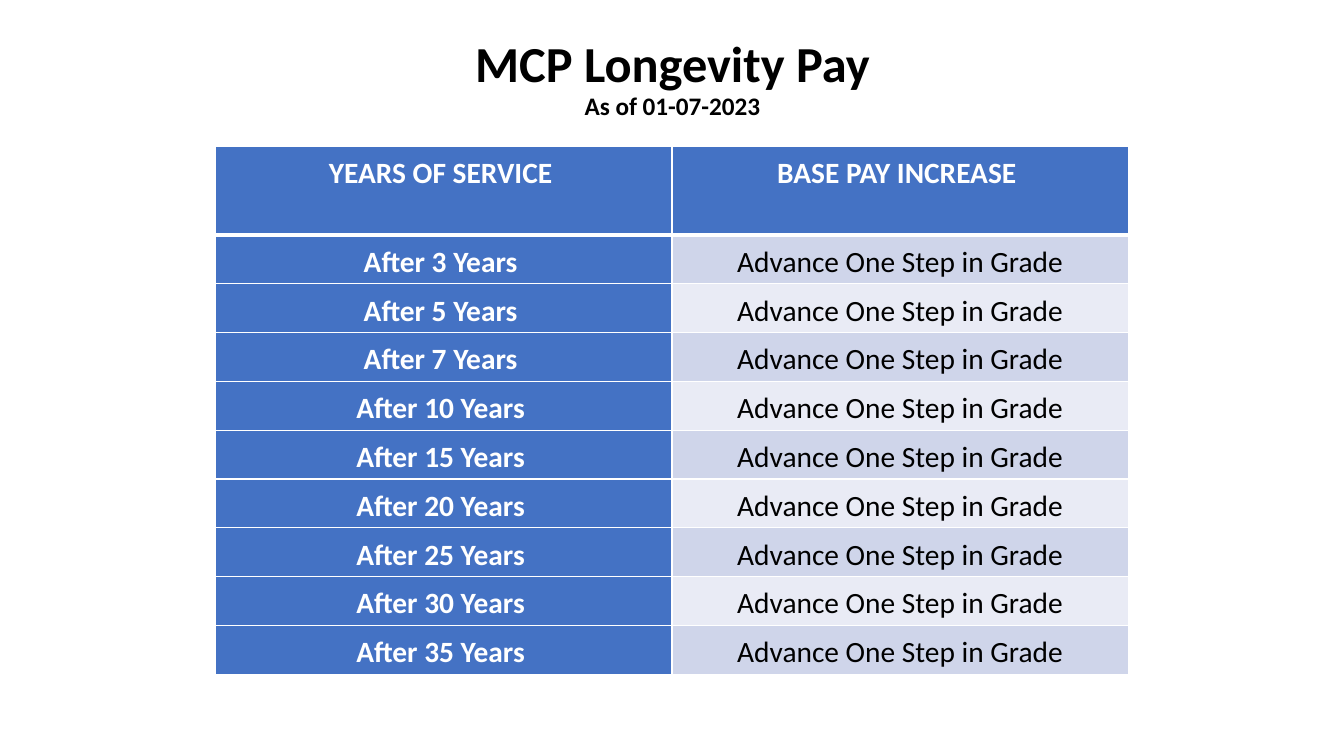
from lxml.etree import SubElement
from pptx import Presentation
from pptx.dml.color import RGBColor
from pptx.enum.text import MSO_ANCHOR, PP_ALIGN
from pptx.oxml.ns import qn
from pptx.util import Inches, Pt

COLORS = {
    "text": "000000",
    "white": "FFFFFF",
    "header": "4472C4",
    "odd_row": "CFD5EA",
    "even_row": "E9EBF5",
}
HEADINGS = ("YEARS OF SERVICE ", "BASE PAY INCREASE ")
SERVICE_YEARS = (3, 5, 7, 10, 15, 20, 25, 30, 35)
HEADER_HEIGHT = 0.88
TABLE_HEIGHT = 5.24
TABLE_WIDTH = 9.05


def format_paragraph(paragraph, size, color, bold, line_spacing):
    paragraph.alignment = PP_ALIGN.CENTER
    paragraph.line_spacing = line_spacing
    for run in paragraph.runs:
        run.font.name = "Calibri"
        run.font.size = Pt(size)
        run.font.bold = bold
        run.font.color.rgb = RGBColor.from_string(COLORS[color])


def add_borders(cell, top, bottom):
    """Draw white cell edges; top and bottom are widths in points."""
    properties = cell._tc.get_or_add_tcPr()
    for edge, width in (("lnL", 1), ("lnR", 1), ("lnT", top), ("lnB", bottom)):
        line = SubElement(properties, qn(f"a:{edge}"), w=str(Pt(width)))
        fill = SubElement(line, qn("a:solidFill"))
        SubElement(fill, qn("a:srgbClr"), val=COLORS["white"])


presentation = Presentation()
presentation.slide_width = Inches(13.33)
presentation.slide_height = Inches(7.5)
slide = presentation.slides.add_slide(presentation.slide_layouts[6])

heading = slide.shapes.add_textbox(
    Inches(0.92), 0, Inches(11.5), Inches(1.45)
).text_frame
heading.word_wrap = True
heading.vertical_anchor = MSO_ANCHOR.MIDDLE
heading.margin_top = Inches(0.19)
heading.text = "MCP Longevity Pay\nAs of 01-07-2023"
for paragraph, size in zip(heading.paragraphs, (36, 18)):
    format_paragraph(paragraph, size, "text", True, 0.9)

rows = [HEADINGS] + [
    (f"After {years} Years ", "Advance One Step in Grade") for years in SERVICE_YEARS
]
pay_table = slide.shapes.add_table(
    len(rows), len(HEADINGS),
    Inches(2.14), Inches(1.45), Inches(TABLE_WIDTH), Inches(TABLE_HEIGHT),
).table

step_height = (TABLE_HEIGHT - HEADER_HEIGHT) / len(SERVICE_YEARS)
for row_number, row in enumerate(rows):
    is_header = row_number == 0
    pay_table.rows[row_number].height = Inches(
        HEADER_HEIGHT if is_header else step_height
    )
    for column_number, wording in enumerate(row):
        cell = pay_table.cell(row_number, column_number)
        emphasized = is_header or column_number == 0
        row_fill = "odd_row" if row_number % 2 else "even_row"
        add_borders(cell, 3 if row_number == 1 else 1, 3 if is_header else 1)
        cell.fill.solid()
        cell.fill.fore_color.rgb = RGBColor.from_string(
            COLORS["header" if emphasized else row_fill]
        )
        cell.margin_left = cell.margin_right = Inches(0.09)
        cell.margin_top = cell.margin_bottom = Inches(0.04)
        cell.text_frame.text = wording
        format_paragraph(
            cell.text_frame.paragraphs[0],
            21, "white" if emphasized else "text", emphasized, 1.15,
        )

presentation.save("out.pptx")
